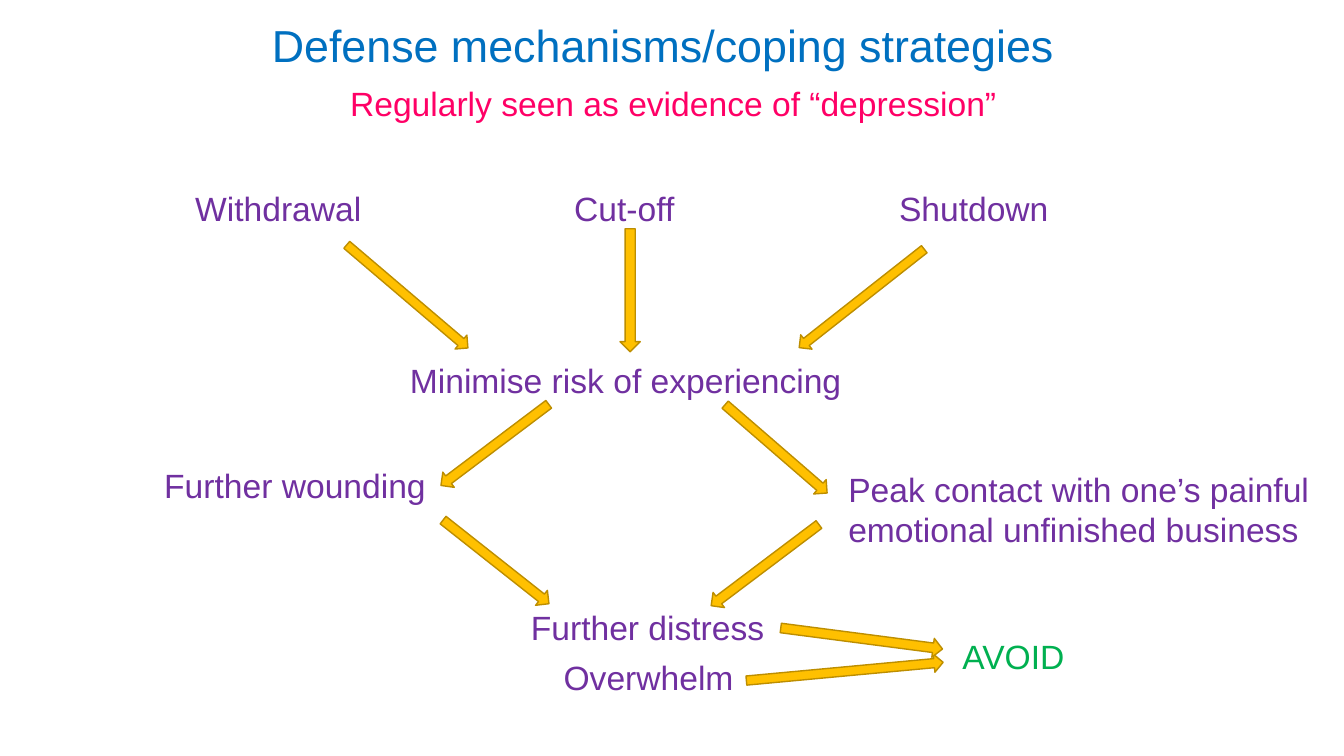
"""Build a slide showing how defense mechanisms lead to avoidance."""
import pptx
import pptx.dml.color
import pptx.enum.shapes
import pptx.enum.text
import pptx.util

Cm = pptx.util.Cm
RGBColor = pptx.dml.color.RGBColor
LEFT = pptx.enum.text.PP_ALIGN.LEFT
CENTER = pptx.enum.text.PP_ALIGN.CENTER

BLUE = RGBColor(0x00, 0x70, 0xC0)
PINK = RGBColor(0xFF, 0x00, 0x66)
PURPLE = RGBColor(0x70, 0x30, 0xA0)
GREEN = RGBColor(0x00, 0xB0, 0x50)
GOLD = RGBColor(0xFF, 0xC0, 0x00)
DARK_GOLD = RGBColor(0xBD, 0x8E, 0x00)

STRATEGY_TOP = 4.62
LINE_HEIGHT = 1.27

presentation = pptx.Presentation()
presentation.slide_width = Cm(33.87)
presentation.slide_height = Cm(19.05)
slide = presentation.slides.add_slide(presentation.slide_layouts[6])


def add_label(text, left, top, width, height=LINE_HEIGHT, align=LEFT, color=PURPLE, size=24):
    label = slide.shapes.add_textbox(Cm(left), Cm(top), Cm(width), Cm(height))
    label.text_frame.word_wrap = True
    label.text_frame.text = text
    paragraph = label.text_frame.paragraphs[0]
    paragraph.alignment = align
    font = paragraph.runs[0].font
    font.name = "Arial"
    font.size = pptx.util.Pt(size)
    font.color.rgb = color


add_label("Defense mechanisms/coping strategies", 6.6, 0.33, 20.75, 1.63, color=BLUE, size=32)
add_label("Regularly seen as evidence of “depression”", 7.82, 1.96, 18.29, align=CENTER, color=PINK)
add_label("Withdrawal", 4.67, STRATEGY_TOP, 4.95)
add_label("Cut-off", 14.22, STRATEGY_TOP, 3.56)
add_label("Shutdown", 21.72, STRATEGY_TOP, 5.64, align=CENTER)
add_label("Minimise risk of experiencing", 10.08, 8.94, 11.63)
add_label("Further wounding", 3.89, 11.58, 7.52)
add_label("Peak contact with one’s painful emotional unfinished business", 21.13, 11.68, 12.45, 2.31)
add_label("Further distress", 12.47, 15.16, 7.7, align=CENTER)
add_label("Overwhelm", 13.42, 16.43, 5.85, align=CENTER)
add_label("AVOID", 23.75, 15.9, 3.58, align=CENTER, color=GREEN)

arrows = [
    (8.26, 7.24, 4.01, 0.46, 40.4),
    (14.33, 7.06, 3.1, 0.51, 90),
    (19.71, 7.29, 4.01, 0.46, 141.8),
    (17.86, 11.07, 3.4, 0.48, 40.9),
    (10.77, 10.97, 3.4, 0.48, 143),
    (10.8, 13.92, 3.4, 0.48, 38.3),
    (17.58, 14.0, 3.4, 0.48, 143),
    (18.8, 16.69, 4.98, 0.46, 354.7),
    (19.66, 15.85, 4.11, 0.48, 7.4),
]
for left, top, length, thickness, angle in arrows:
    arrow = slide.shapes.add_shape(
        pptx.enum.shapes.MSO_SHAPE.RIGHT_ARROW, Cm(left), Cm(top), Cm(length), Cm(thickness)
    )
    arrow.rotation = angle
    arrow.shadow.inherit = False
    arrow.fill.solid()
    arrow.fill.fore_color.rgb = GOLD
    arrow.line.color.rgb = DARK_GOLD
    arrow.line.width = pptx.util.Pt(1)

presentation.save("out.pptx")
